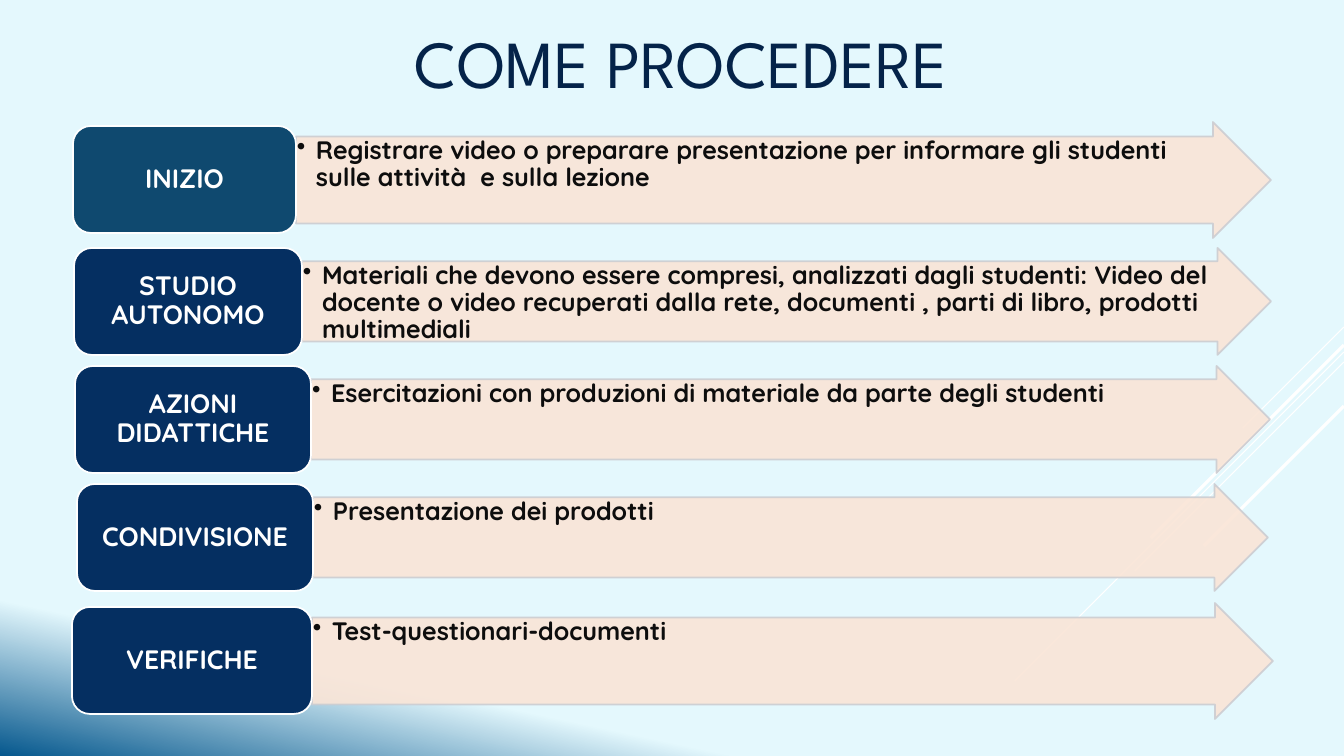
import pptx
import pptx.dml.color
import pptx.enum.shapes
import pptx.enum.text
import pptx.oxml
import pptx.oxml.ns
import pptx.util

PX = 12192000 / 1344
COLORS = {
    "sky": "E4F8FD", "deep": "06588E", "white": "FFFFFF", "title": "042349",
    "peach": "FAE5D7", "edge": "CCCDD2", "ink": "0D0D0D",
    "teal": "0F496F", "navy": "052F61",
}
SHAPES = pptx.enum.shapes.MSO_SHAPE
ALIGN = pptx.enum.text.PP_ALIGN
ANCHOR = pptx.enum.text.MSO_ANCHOR


def rgb(name):
    return pptx.dml.color.RGBColor.from_string(COLORS[name])


def write(box, text, size, color, font="Quicksand", bold=True, align=ALIGN.CENTER,
          anchor=ANCHOR.MIDDLE, inset=(8, 4), spacing=0.9):
    frame = box.text_frame
    frame.word_wrap = True
    frame.vertical_anchor = anchor
    frame.margin_left = frame.margin_right = round(inset[0] * PX)
    frame.margin_top = frame.margin_bottom = round(inset[1] * PX)
    para = frame.paragraphs[0]
    para.alignment = align
    para.line_spacing = spacing
    span = para.add_run()
    span.text = text
    span.font.size = pptx.util.Pt(size)
    span.font.name = font
    span.font.bold = bold
    span.font.color.rgb = rgb(color)
    return para


deck = pptx.Presentation()
deck.slide_width = round(1344 * PX)
deck.slide_height = round(756 * PX)
page = deck.slides.add_slide(deck.slide_layouts[6])

# Background gradient
backdrop = page.background.fill
backdrop.gradient()
backdrop.gradient_angle = 258
for stop, position, color in zip(backdrop.gradient_stops, (0.85, 1), ("sky", "deep")):
    stop.position = position
    stop.color.rgb = rgb(color)

# Diagonal rays from the right edge: top, horizontal and vertical run, width
for top, run, width in [(327, 101, 0.75), (352, 329, 0.75), (362, 209, 0.75),
                        (345, 193, 2.25), (406, 140, 2.25)]:
    ray = page.shapes.add_connector(
        pptx.enum.shapes.MSO_CONNECTOR.STRAIGHT,
        *[round(n * PX) for n in (1344, top, 1344 - run, top + run)])
    ray.line.color.rgb = rgb("white")
    ray.line.width = pptx.util.Pt(width)
    ray._element.spPr.append(pptx.oxml.parse_xml(
        "<a:effectLst %s/>" % pptx.oxml.ns.nsdecls("a")))

# Steps: label, label left, top and width, label fill, arrow right, top and height, text
steps = [
    ("INIZIO", 73, 126, 223, "teal", 1271, 122, 116,
     "Registrare video o preparare presentazione per informare gli studenti "
     "sulle attività  e sulla lezione"),
    ("STUDIO AUTONOMO", 74, 248, 228, "navy", 1271, 248, 107,
     "Materiali che devono essere compresi, analizzati dagli studenti: Video del "
     "docente o video recuperati dalla rete, documenti , parti di libro, prodotti "
     "multimediali"),
    ("AZIONI DIDATTICHE", 75, 366, 236, "navy", 1270, 366, 107,
     "Esercitazioni con produzioni di materiale da parte degli studenti"),
    ("CONDIVISIONE", 77, 484, 236, "navy", 1268, 484, 107,
     "Presentazione dei prodotti"),
    ("VERIFICHE", 72, 607, 240, "navy", 1273, 603, 116,
     "Test-questionari-documenti"),
]
for label, left, top, width, fill, tip, arrow_top, arrow_height, text in steps:
    start = left + width
    arrow = page.shapes.add_shape(
        SHAPES.RIGHT_ARROW,
        *[round(n * PX) for n in (start, arrow_top, tip - start, arrow_height)])
    arrow.adjustments[0] = 0.75
    arrow.adjustments[1] = 0.5
    tab = page.shapes.add_shape(
        SHAPES.ROUNDED_RECTANGLE, *[round(n * PX) for n in (left, top, width, 107)])
    for box, inside, edge in [(arrow, "peach", "edge"), (tab, fill, "white")]:
        box.shadow.inherit = False
        box.fill.solid()
        box.fill.fore_color.rgb = rgb(inside)
        box.line.color.rgb = rgb(edge)
        box.line.width = pptx.util.Pt(1.25)
    for color in arrow._element.spPr.iter(pptx.oxml.ns.qn("a:srgbClr")):
        color.append(pptx.oxml.parse_xml(
            '<a:alpha %s val="90000"/>' % pptx.oxml.ns.nsdecls("a")))

    write(tab, label, 19, "white")
    para = write(arrow, text, 18, "ink", align=ALIGN.LEFT, anchor=ANCHOR.TOP, inset=(1, 1))
    properties = para._p.get_or_add_pPr()
    properties.set("marL", str(round(19 * PX)))
    properties.set("indent", str(round(-19 * PX)))
    properties.append(pptx.oxml.parse_xml(
        '<a:buChar %s char="•"/>' % pptx.oxml.ns.nsdecls("a")))

title = page.shapes.add_textbox(*[round(n * PX) for n in (76, 16, 1211, 92)])
write(title, "COME PROCEDERE", 48, "title", font="League Spartan", bold=False,
      anchor=ANCHOR.TOP, inset=(10, 5), spacing=1.0)

deck.save("out.pptx")
